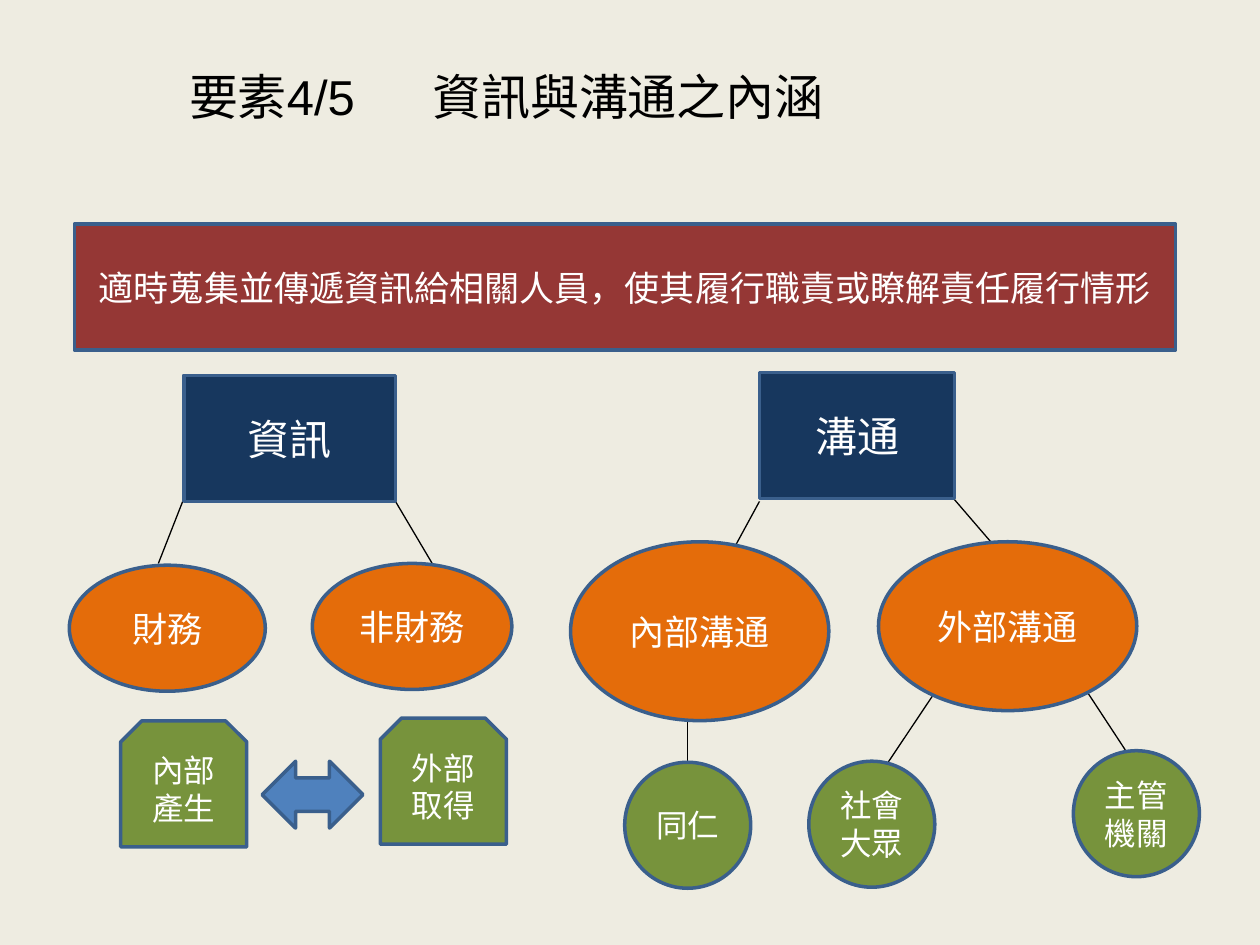
from pptx import Presentation
from pptx.dml.color import RGBColor as RGB
from pptx.enum.shapes import MSO_CONNECTOR as Link, MSO_SHAPE as Form
from pptx.enum.text import MSO_ANCHOR as Anchor, PP_ALIGN as Align
from pptx.oxml.ns import qn
from pptx.util import Pt
from lxml.etree import SubElement

CREAM = RGB(0xEE, 0xEC, 0xE1)
RED = RGB(0x95, 0x37, 0x35)
NAVY = RGB(0x17, 0x37, 0x5E)
ORANGE = RGB(0xE4, 0x6C, 0x0A)
GREEN = RGB(0x77, 0x93, 0x3C)
BLUE = RGB(0x4F, 0x81, 0xBD)
EDGE = RGB(0x3A, 0x5F, 0x8C)
WHITE = RGB(0xFF, 0xFF, 0xFF)
BLACK = RGB(0, 0, 0)
SANS, MONO = "Arial", "DejaVu Sans Mono"

TITLE = "要素4/5\t資訊與溝通之內涵"
GOAL = [("適時蒐集並傳遞資訊給相關人員", SANS),
        ("，使其履行職責或瞭解責任履行情形", MONO)]
TOPICS = [("資訊", 105, 214.5, 121, 72), ("溝通", 434, 213, 111.5, 72)]
KINDS = [("財務", 39.6, 323, 112, 72), ("非財務", 178.5, 322, 114, 72),
         ("內部溝通", 326, 309.6, 147.6, 102.2), ("外部溝通", 502, 309.6, 147.6, 96.5)]
ORIGINS = [("內部產生", 69, 412, 72, 72), ("外部取得", 217.4, 410.4, 72, 72)]
GROUPS = [("同仁", 357, 435.6, 72, 72), ("社會大眾", 462.2, 435, 72, 72),
          ("主管機關", 613.4, 429, 72, 72)]
LEVELS = [(Form.RECTANGLE, NAVY, 24, TOPICS), (Form.OVAL, ORANGE, 20, KINDS),
          (Form.SNIP_2_SAME_RECTANGLE, GREEN, 18, ORIGINS), (Form.OVAL, GREEN, 18, GROUPS)]
LINKS = [(105, 285, 90.5, 322), (226, 286.5, 247, 322),
         (434, 286.5, 412, 327), (545, 285, 622, 374.5),
         (393, 407, 393, 479), (537, 391.5, 507.5, 435.6), (622, 396.5, 643, 428.5)]


def add_run(para, text, font, size, color):
    run = para.add_run()
    run.text = text
    run.font.name = font
    run.font.size = Pt(size)
    run.font.color.rgb = color


def add_node(form, color, size, runs, box):
    node = slide.shapes.add_shape(form, *map(Pt, box))
    node.shadow.inherit = False
    node.fill.solid()
    node.fill.fore_color.rgb = color
    node.line.color.rgb = EDGE
    node.line.width = Pt(2)
    frame = node.text_frame
    frame.word_wrap = True
    frame.vertical_anchor = Anchor.MIDDLE
    para = frame.paragraphs[0]
    para.alignment = Align.CENTER
    for text, font in runs:
        add_run(para, text, font, size, WHITE)


def add_link(ends):
    link = slide.shapes.add_connector(Link.STRAIGHT, *map(Pt, ends))
    link.line.color.rgb = BLACK
    link.line.width = Pt(0.75)
    SubElement(link._element.spPr, qn("a:effectLst"))


deck = Presentation()
deck.slide_width, deck.slide_height = Pt(720), Pt(540)
slide = deck.slides.add_slide(deck.slide_layouts[5])
slide.background.fill.solid()
slide.background.fill.fore_color.rgb = CREAM

title = slide.shapes.title
title.left, title.top, title.width, title.height = map(Pt, (-34.5, 10, 648, 90))
frame = title.text_frame
frame.margin_left = Pt(142.5)
frame.vertical_anchor = Anchor.MIDDLE
para = frame.paragraphs[0]
para.alignment = Align.LEFT
tabs = SubElement(para._p.get_or_add_pPr(), qn("a:tabLst"))
SubElement(tabs, qn("a:tab"), pos=str(Pt(139)), algn="l")
add_run(para, TITLE, SANS, 28, BLACK)

for ends in LINKS:
    add_link(ends)
add_node(Form.RECTANGLE, RED, 20, GOAL, (42.5, 128, 629.3, 72))
for form, color, size, nodes in LEVELS:
    for text, *box in nodes:
        add_node(form, color, size, [(text, SANS)], box)
add_node(Form.LEFT_RIGHT_ARROW, BLUE, 18, [], (149.8, 435, 57.6, 38.2))

deck.save("out.pptx")
